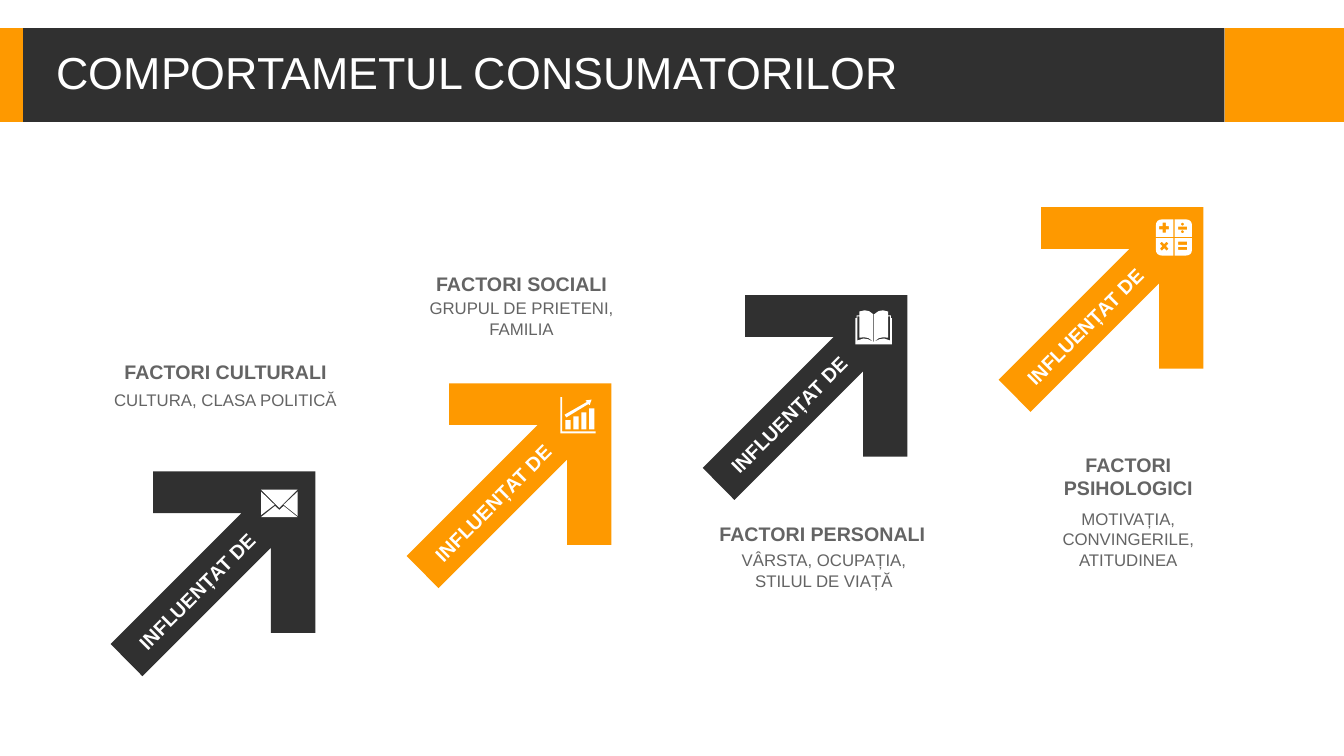
from math import cos, pi, sin

from pptx import Presentation
from pptx.dml.color import RGBColor
from pptx.enum.shapes import MSO_SHAPE as Shape
from pptx.enum.text import MSO_ANCHOR as Anchor, MSO_AUTO_SIZE as AutoSize, PP_ALIGN as Align
from pptx.util import Cm, Pt

ORANGE = RGBColor(0xFE, 0x99, 0x00)
DARK = RGBColor(0x30, 0x30, 0x30)
GREY = RGBColor(0x64, 0x64, 0x64)
WHITE = RGBColor(0xFF, 0xFF, 0xFF)

deck = Presentation()
deck.slide_width, deck.slide_height = Cm(33.87), Cm(19.05)
page = deck.slides.add_slide(deck.slide_layouts[5])


def draw_outline(contours, left, top, colour):
    """Draw closed contours, given in hundredths of a centimetre, as one shape."""
    builder = page.shapes.build_freeform(*contours[0][0], scale=Cm(0.01))
    builder.add_line_segments(contours[0][1:], close=True)
    for contour in contours[1:]:
        builder.move_to(*contour[0])
        builder.add_line_segments(contour[1:], close=True)
    shape = builder.convert_to_shape(Cm(left), Cm(top))
    shape.shadow.inherit = False
    shape.fill.solid()
    shape.fill.fore_color.rgb = colour
    shape.line.fill.background()


def write_box(box, text, size, colour, bold=False, align=Align.CENTER, anchor=Anchor.MIDDLE):
    frame = box.text_frame
    frame.word_wrap = True
    frame.auto_size = AutoSize.NONE
    frame.vertical_anchor = anchor
    para = frame.paragraphs[0]
    para.alignment = align
    span = para.add_run()
    span.text = text
    span.font.name = "Arial"
    span.font.size = Pt(size)
    span.font.bold = bold
    span.font.color.rgb = colour


# Title band
for left, width, colour in [(30.86, 3.01, ORANGE), (0, 30.86, DARK), (0, 0.58, ORANGE)]:
    band = page.shapes.add_shape(Shape.RECTANGLE, Cm(left), Cm(0.71), Cm(width), Cm(2.36))
    band.shadow.inherit = False
    band.fill.solid()
    band.fill.fore_color.rgb = colour
    band.line.fill.background()

title = page.shapes.title
page.shapes.element.append(title.element)  # bring the title in front of the band
title.left, title.top, title.width, title.height = Cm(1.17), Cm(0.89), Cm(24.64), Cm(2.01)
write_box(title, "COMPORTAMETUL CONSUMATORILOR", 32, WHITE, align=Align.LEFT)
title.text_frame.paragraphs[0].line_spacing = 0.9

# Rising arrows
ARROW = [(107, 0), (516, 0), (516, 407), (404, 407), (404, 192),
         (80, 516), (0, 435), (330, 105), (107, 105)]
for step in range(4):
    left, top = 2.79 + 7.46 * step, 11.88 - 2.22 * step
    draw_outline([ARROW], left, top, ORANGE if step % 2 else DARK)
    label = page.shapes.add_textbox(Cm(left - 0.08), Cm(top + 2.58), Cm(4.5), Cm(0.86))
    label.rotation = 315
    write_box(label, "INFLUENȚAT DE", 14, WHITE, bold=True)

# Captions: left, width, heading top and height, detail top and height
captions = [
    (2.46, 6.45, 8.94, 0.86, 9.7, 0.76, "FACTORI CULTURALI", "CULTURA, CLASA POLITICĂ"),
    (10.26, 5.77, 6.73, 0.86, 7.39, 1.27, "FACTORI SOCIALI", "GRUPUL DE PRIETENI, FAMILIA"),
    (17.88, 5.77, 13.03, 0.86, 13.74, 1.27, "FACTORI PERSONALI",
     "VÂRSTA, OCUPAȚIA, STILUL DE VIAȚĂ"),
    (25.55, 5.77, 10.95, 2.11, 12.7, 2.62, "FACTORI PSIHOLOGICI",
     "MOTIVAȚIA, CONVINGERILE, ATITUDINEA"),
]
for left, width, head_top, head_height, body_top, body_height, heading, detail in captions:
    head = page.shapes.add_textbox(Cm(left), Cm(head_top), Cm(width), Cm(head_height))
    side = Align.LEFT if heading == "FACTORI PERSONALI" else Align.CENTER
    write_box(head, heading, 14, GREY, bold=True, align=side)
    body = page.shapes.add_textbox(Cm(left), Cm(body_top), Cm(width), Cm(body_height))
    write_box(body, detail, 12, GREY, anchor=Anchor.TOP)

# Envelope
envelope = [
    [(57, 41), (92, 69), (0, 69), (35, 41), (46, 51)],
    [(92, 5), (92, 66), (57, 38)],
    [(0, 5), (34, 38), (0, 64)],
    [(0, 0), (92, 0), (46, 46)],
]
draw_outline(envelope, 6.58, 12.34, WHITE)

# Growth chart
growth = [[(x, y), (x + 13, y), (x + 13, 81), (x, 81)]
          for x, y in [(13 + 20 * bar, 58 - 10 * bar) for bar in range(4)]]
growth.append([(64, 8), (79, 6), (74, 20), (71, 17), (15, 51), (11, 44), (67, 12)])
growth.append([(0, 0), (5, 0), (5, 86), (89, 86), (89, 91), (0, 91)])
draw_outline(growth, 14.12, 10.01, WHITE)

# Calculator: four keys, with the signs cut out
key = [(0, 15), (1, 9), (4, 4), (9, 1), (15, 0), (44, 0), (44, 44), (0, 44)]
calculator = [[(91 - x if flip_x else x, 91 - y if flip_y else y) for x, y in key]
              for flip_x in (False, True) for flip_y in (False, True)]
calculator += [[(56, y), (79, y), (79, y + 8), (56, y + 8)] for y in (18, 56, 69)]
calculator += [[(round(67 + 4 * cos(pi * n / 6)), round(y + 4 * sin(pi * n / 6)))
                for n in range(12)] for y in (12, 31)]
calculator.append([(17, 8), (25, 8), (25, 17), (33, 17), (33, 25), (25, 25),
                   (25, 33), (17, 33), (17, 25), (8, 25), (8, 17), (17, 17)])
calculator.append([(15, 56), (10, 61), (16, 67), (10, 74), (15, 79), (21, 73),
                   (27, 79), (32, 74), (26, 67), (32, 61), (27, 56), (21, 62)])
draw_outline(calculator, 29.13, 5.53, WHITE)

# Open book, symmetrical about its spine
leaf = [(10, 3), (23, 0), (34, 2), (45, 10), (45, 79), (33, 70), (22, 68), (10, 69)]
cover = [(0, 86), (0, 20), (3, 20), (3, 13), (10, 13), (10, 15), (5, 15), (5, 76),
         (20, 71), (32, 73), (44, 79)]
book = [leaf, [(92 - x, y) for x, y in leaf],
        cover + [(92 - x, y) for x, y in reversed(cover)]]
draw_outline(book, 21.56, 7.82, WHITE)

deck.save("out.pptx")
